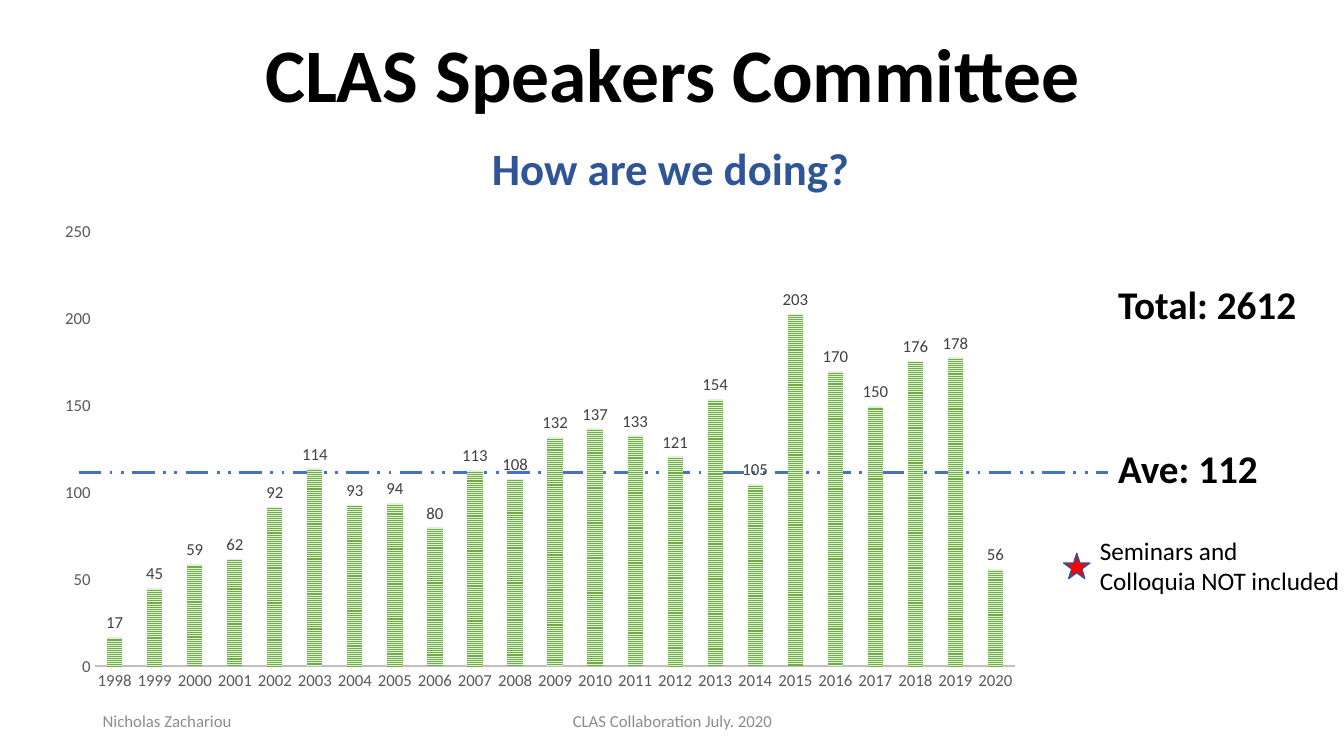
from dataclasses import dataclass

from lxml import etree
from pptx import Presentation
from pptx.chart.data import CategoryChartData
from pptx.dml.color import RGBColor
from pptx.enum.chart import XL_CHART_TYPE, XL_LABEL_POSITION, XL_TICK_MARK
from pptx.enum.dml import MSO_LINE, MSO_PATTERN
from pptx.enum.shapes import MSO_CONNECTOR, MSO_SHAPE
from pptx.enum.text import MSO_ANCHOR as Anchor
from pptx.enum.text import MSO_AUTO_SIZE as AutoSize
from pptx.enum.text import PP_ALIGN as Align
from pptx.oxml import parse_xml
from pptx.oxml.ns import nsdecls, qn
from pptx.util import Inches, Pt

FONT = "Calibri"
BLACK = RGBColor(0x00, 0x00, 0x00)
NAVY = RGBColor(0x2F, 0x55, 0x97)
GREY = RGBColor(0x8C, 0x8C, 0x8C)
AXIS_TEXT = RGBColor(0x59, 0x59, 0x59)
AXIS_LINE = RGBColor(0xBF, 0xBF, 0xBF)
LABEL_TEXT = RGBColor(0x40, 0x40, 0x40)
BLUE = RGBColor(0x44, 0x72, 0xC4)
STAR_LINE = RGBColor(0x32, 0x54, 0x91)
RED = RGBColor(0xFF, 0x00, 0x00)
GREEN = RGBColor(0x70, 0xAD, 0x47)
PALE_GREEN = RGBColor(0xE2, 0xF0, 0xD9)

FIRST_YEAR = 1998
TALKS = (17, 45, 59, 62, 92, 114, 93, 94, 80, 113, 108, 132,
         137, 133, 121, 154, 105, 203, 170, 150, 176, 178, 56)
PLOT_AREA = {"x": 0.06, "y": 0.04, "w": 0.93, "h": 0.89}


@dataclass(frozen=True)
class Label:
    text: str
    left: float
    top: float
    width: float
    height: float
    size: int
    color: RGBColor = BLACK
    bold: bool = False
    wrap: bool = True
    align: Align = Align.LEFT
    anchor: Anchor = Anchor.TOP


LABELS = (
    Label("How are we doing?", 4.78, 1.35, 3.78, 0.64, 32, NAVY, bold=True, wrap=False),
    Label("Total: 2612", 10.99, 2.73, 1.99, 0.57, 28, bold=True, wrap=False),
    Label("Ave: 112", 10.99, 4.36, 1.61, 0.57, 28, bold=True, wrap=False),
    Label("Seminars and\nColloquia NOT included", 10.81, 5.26, 2.96, 0.71, 18),
    Label("Nicholas Zachariou", 0.92, 6.95, 3, 0.4, 12, GREY, anchor=Anchor.MIDDLE),
    Label("CLAS Collaboration July. 2020", 4.42, 6.95, 4.5, 0.4, 12, GREY,
          align=Align.CENTER, anchor=Anchor.MIDDLE),
)


def set_font(font, size: int, color: RGBColor, bold: bool = False) -> None:
    font.name = FONT
    font.size = Pt(size)
    font.bold = bold
    font.color.rgb = color


def write_label(box, label: Label) -> None:
    """Place a text shape and fill it as the label says."""
    box.left, box.top = Inches(label.left), Inches(label.top)
    box.width, box.height = Inches(label.width), Inches(label.height)
    frame = box.text_frame
    frame.text = label.text
    frame.word_wrap = label.wrap
    frame.auto_size = AutoSize.NONE
    frame.vertical_anchor = label.anchor
    for para in frame.paragraphs:
        para.alignment = label.align
        for span in para.runs:
            set_font(span.font, label.size, label.color, label.bold)


def add_average_line(page) -> None:
    line = page.shapes.add_connector(
        MSO_CONNECTOR.STRAIGHT, Inches(0.78), Inches(4.69), Inches(10.99), Inches(4.69))
    line.line.color.rgb = BLUE
    line.line.width = Pt(2)
    line.line.dash_style = MSO_LINE.DASH_DOT_DOT
    etree.SubElement(line._element.spPr, qn("a:effectLst"))


def add_star(page) -> None:
    star = page.shapes.add_shape(
        MSO_SHAPE.STAR_5_POINT, Inches(10.55), Inches(5.49), Inches(0.26), Inches(0.25))
    star.shadow.inherit = False
    star.fill.solid()
    star.fill.fore_color.rgb = RED
    star.line.color.rgb = STAR_LINE
    star.line.width = Pt(1)


def fix_plot_area(chart) -> None:
    """Set the inner plot rectangle and make the chart background clear."""
    space = chart._chartSpace
    plot_area = space.chart.plotArea
    for layout in plot_area.findall(qn("c:layout")):
        plot_area.remove(layout)
    sides = "".join(f'<c:{side} val="{part}"/>' for side, part in PLOT_AREA.items())
    plot_area.insert(0, parse_xml(
        f'<c:layout {nsdecls("c")}><c:manualLayout><c:layoutTarget val="inner"/>'
        f'<c:xMode val="edge"/><c:yMode val="edge"/>{sides}</c:manualLayout></c:layout>'))
    clear = (f'<c:spPr {nsdecls("c", "a")}><a:noFill/>'
             '<a:ln><a:noFill/></a:ln></c:spPr>')
    plot_area.append(parse_xml(clear))
    space.chart.addnext(parse_xml(clear))


def add_talks_chart(page) -> None:
    data = CategoryChartData()
    data.categories = [str(FIRST_YEAR + index) for index in range(len(TALKS))]
    data.add_series("Series 1", TALKS)
    chart = page.shapes.add_chart(
        XL_CHART_TYPE.COLUMN_CLUSTERED,
        Inches(0.35), Inches(2.11), Inches(9.82), Inches(4.84), data).chart
    set_font(chart.font, 10, BLACK)
    chart.has_legend = False
    chart.has_title = False

    for axis in (chart.category_axis, chart.value_axis):
        axis.major_tick_mark = axis.minor_tick_mark = XL_TICK_MARK.NONE
        axis.has_major_gridlines = False
        set_font(axis.tick_labels.font, 12, AXIS_TEXT)
    chart.category_axis.format.line.color.rgb = AXIS_LINE
    chart.category_axis.format.line.width = Pt(1.5)
    chart.value_axis.format.line.fill.background()
    chart.value_axis.minimum_scale = 0
    chart.value_axis.maximum_scale = 250
    chart.value_axis.major_unit = 50

    plot = chart.plots[0]
    plot.gap_width = 164
    plot.overlap = -22
    plot.vary_by_categories = False
    plot.has_data_labels = True
    plot.data_labels.show_value = True
    plot.data_labels.position = XL_LABEL_POSITION.OUTSIDE_END
    set_font(plot.data_labels.font, 12, LABEL_TEXT)
    fill = plot.series[0].format.fill
    fill.patterned()
    fill.pattern = MSO_PATTERN.NARROW_HORIZONTAL
    fill.fore_color.rgb = GREEN
    fill.back_color.rgb = PALE_GREEN
    fix_plot_area(chart)


def main() -> None:
    deck = Presentation()
    deck.slide_width, deck.slide_height = Inches(13.33), Inches(7.5)
    page = deck.slides.add_slide(deck.slide_layouts.get_by_name("Title Only"))

    title = page.shapes.title
    write_label(title, Label("CLAS Speakers Committee", 1.67, 0.32, 10, 0.91, 54,
                             bold=True, align=Align.CENTER, anchor=Anchor.BOTTOM))
    title.text_frame.paragraphs[0].line_spacing = 0.9
    add_average_line(page)
    add_star(page)
    for label in LABELS:
        write_label(page.shapes.add_textbox(0, 0, 0, 0), label)
    add_talks_chart(page)
    deck.save("out.pptx")


if __name__ == "__main__":
    main()
